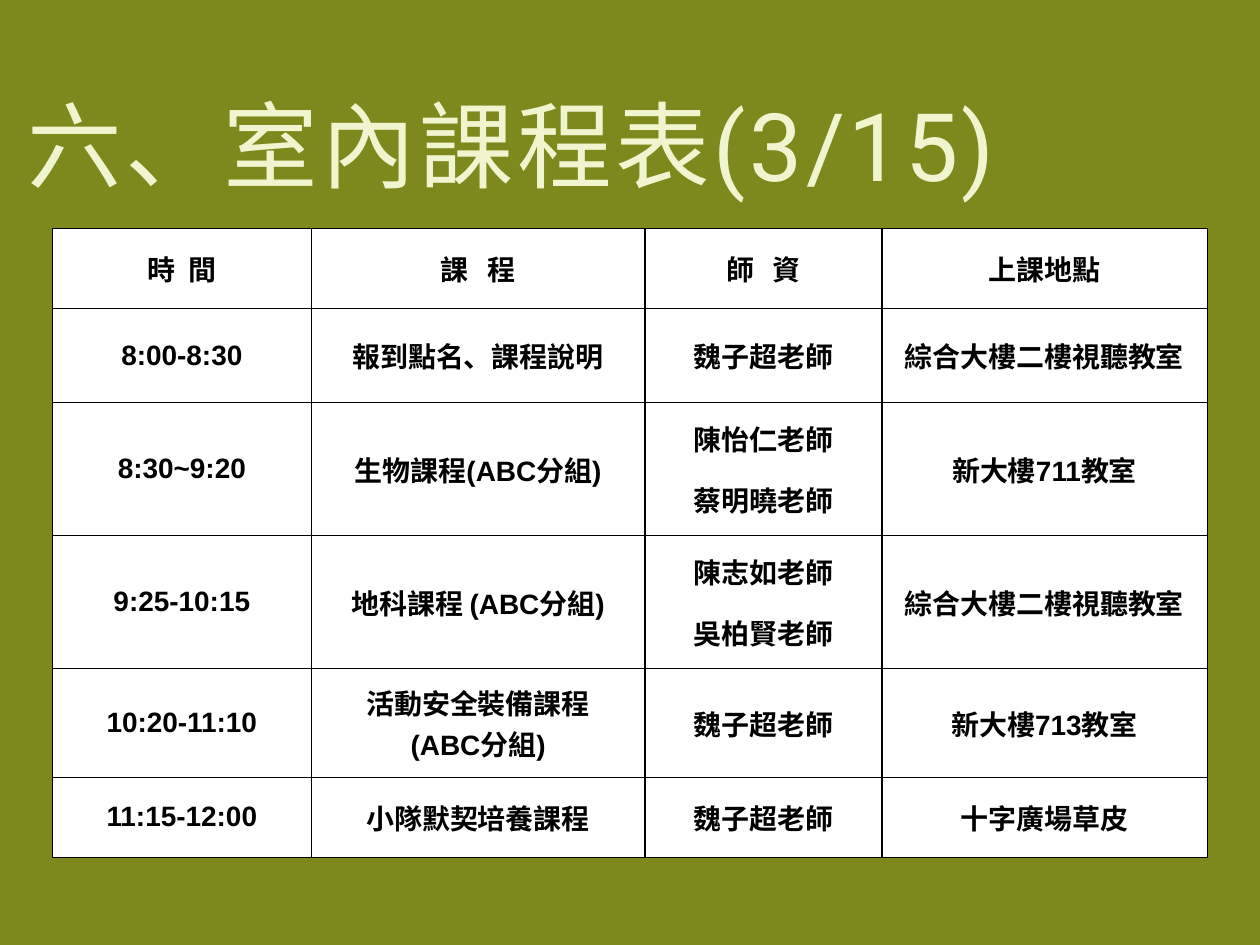
from typing import NamedTuple

from lxml import etree
from pptx import Presentation
from pptx import util as u
from pptx.dml.color import RGBColor
from pptx.enum import text as t
from pptx.oxml import ns

Pt = u.Pt
BACKGROUND = "7D891D"
TITLE_COLOR = "F0F5D0"
BLACK = "000000"
WHITE = "FFFFFF"
COLUMN_WIDTHS = (147.8, 190.8, 135.4, 185.8)


class Lesson(NamedTuple):
    height: float
    time: str
    course: str
    teachers: str
    place: str


LESSONS = (
    Lesson(45.7, "時  間", "課   程", "師   資", "上課地點"),
    Lesson(53.7, "8:00-8:30", "報到點名、課程說明", "魏子超老師", "綜合大樓二樓視聽教室"),
    Lesson(76, "8:30~9:20", "生物課程(ABC分組)", "陳怡仁老師\n蔡明曉老師", "新大樓711教室"),
    Lesson(76, "9:25-10:15", "地科課程 (ABC分組)", "陳志如老師\n吳柏賢老師", "綜合大樓二樓視聽教室"),
    Lesson(62, "10:20-11:10", "活動安全裝備課程\v(ABC分組)", "魏子超老師", "新大樓713教室"),
    Lesson(45.7, "11:15-12:00", "小隊默契培養課程", "魏子超老師", "十字廣場草皮"),
)


def paint(color_format, color: str) -> None:
    color_format.rgb = RGBColor.from_string(color)


def fill_solid(fill, color: str) -> None:
    fill.solid()
    paint(fill.fore_color, color)


def write_text(frame, content: str, *, font: str, size: float, color: str,
               bold: bool = False, align=t.PP_ALIGN.LEFT, tracking: float = 0,
               before: float = 0, after: float = 0, line_spacing: float = 1) -> None:
    lines = content.split("\n")
    for index, line in enumerate(lines):
        paragraph = frame.add_paragraph() if index else frame.paragraphs[0]
        paragraph.text = line
        paragraph.alignment = align
        paragraph.line_spacing = line_spacing
        paragraph.space_before = Pt(before)
        paragraph.space_after = Pt(after if index == len(lines) - 1 else 0)
        for run in paragraph.runs:
            run.font.name = font
            run.font.size = Pt(size)
            run.font.bold = bold
            paint(run.font.color, color)
            if tracking:
                run.font._element.set("spc", str(round(tracking * 100)))


def set_borders(cell, color: str, width: float) -> None:
    properties = cell._tc.get_or_add_tcPr()
    for index, side in enumerate(("lnL", "lnR", "lnT", "lnB")):
        line = etree.Element(ns.qn(f"a:{side}"), w=str(Pt(width)))
        solid = etree.SubElement(line, ns.qn("a:solidFill"))
        etree.SubElement(solid, ns.qn("a:srgbClr"), val=color)
        properties.insert(index, line)


def format_cell(cell, content: str) -> None:
    cell.margin_left = cell.margin_right = Pt(5)
    cell.margin_top = cell.margin_bottom = Pt(7.2)
    cell.vertical_anchor = t.MSO_ANCHOR.MIDDLE
    fill_solid(cell.fill, WHITE)
    set_borders(cell, BLACK, 0.75)
    write_text(cell.text_frame, content, font="Arial", size=16, color=BLACK, bold=True,
               align=t.PP_ALIGN.CENTER, before=12, after=12)


def add_title(slide, content: str) -> None:
    title = slide.shapes.title
    title.left, title.top, title.width, title.height = Pt(8.6), Pt(25.2), Pt(684.7), Pt(93.6)
    frame = title.text_frame
    frame.word_wrap = True
    frame.auto_size = t.MSO_AUTO_SIZE.NONE
    frame.vertical_anchor = t.MSO_ANCHOR.BOTTOM
    frame.margin_left = frame.margin_right = Pt(7.2)
    frame.margin_top = frame.margin_bottom = Pt(3.6)
    write_text(frame, content, font="Roboto", size=54, color=TITLE_COLOR,
               tracking=2, line_spacing=0.9)


def add_timetable(slide, lessons: tuple[Lesson, ...]) -> None:
    table = slide.shapes.add_table(
        len(lessons), len(COLUMN_WIDTHS), Pt(30), Pt(130.7),
        Pt(sum(COLUMN_WIDTHS)), Pt(sum(lesson.height for lesson in lessons))).table
    table.first_row = table.horz_banding = False
    for column, width in zip(table.columns, COLUMN_WIDTHS):
        column.width = Pt(width)
    for row, lesson in zip(table.rows, lessons):
        row.height = Pt(lesson.height)
        for cell, content in zip(row.cells, lesson[1:]):
            format_cell(cell, content)


def main() -> None:
    presentation = Presentation()
    presentation.slide_width, presentation.slide_height = Pt(720), Pt(540)
    slide = presentation.slides.add_slide(presentation.slide_layouts.get_by_name("Title Only"))
    fill_solid(slide.background.fill, BACKGROUND)
    add_title(slide, "六、室內課程表(3/15)")
    add_timetable(slide, LESSONS)
    presentation.save("out.pptx")


if __name__ == "__main__":
    main()
